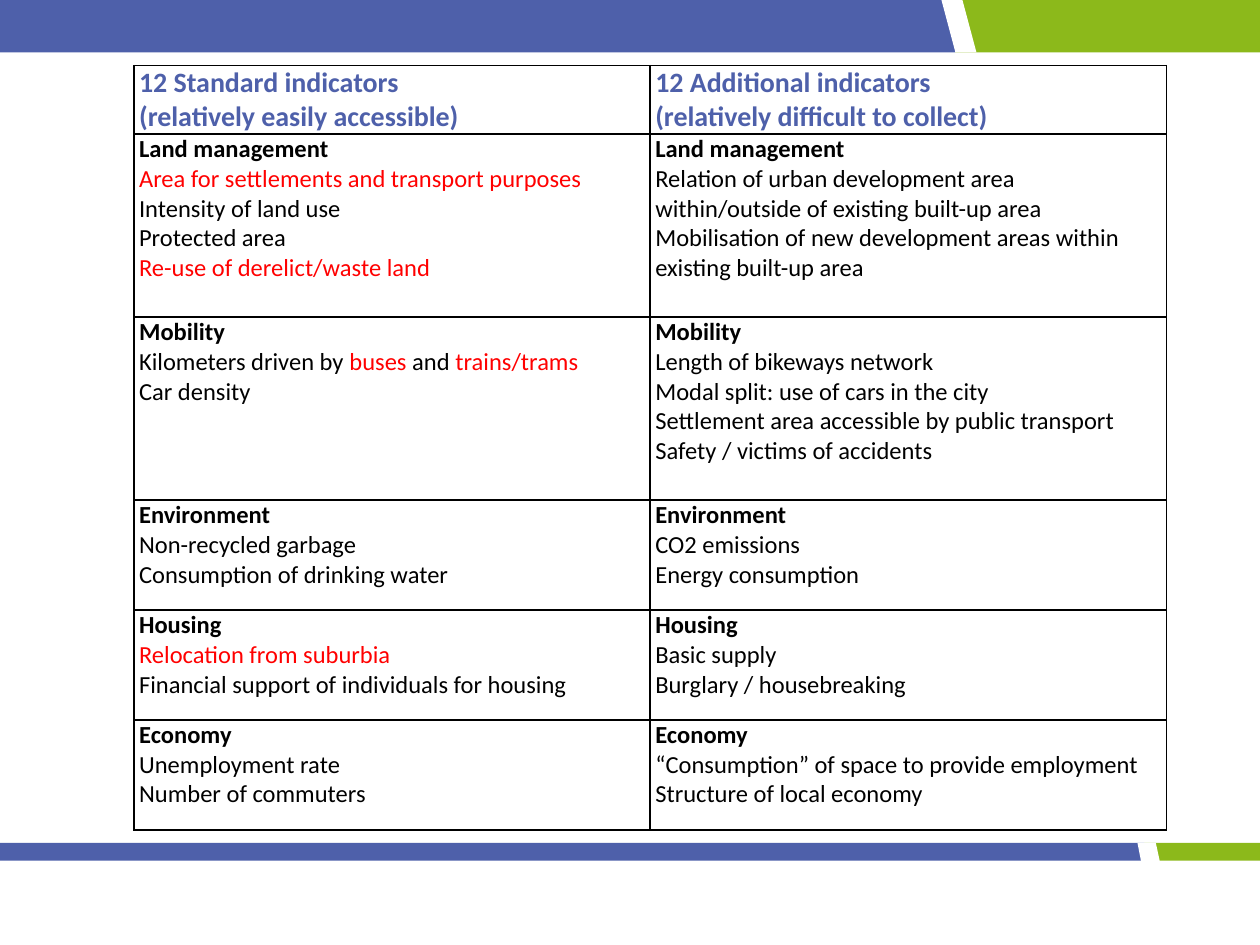
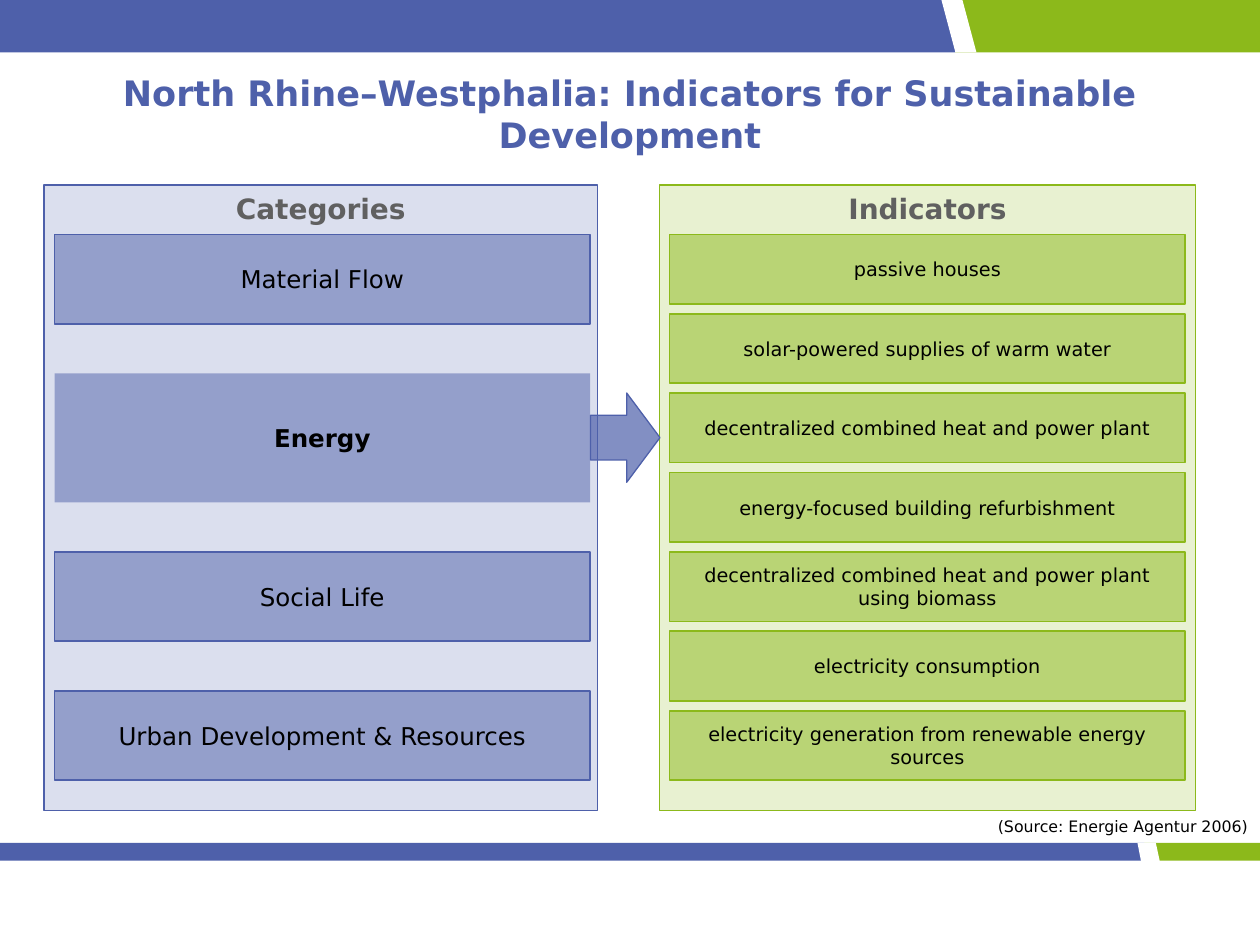
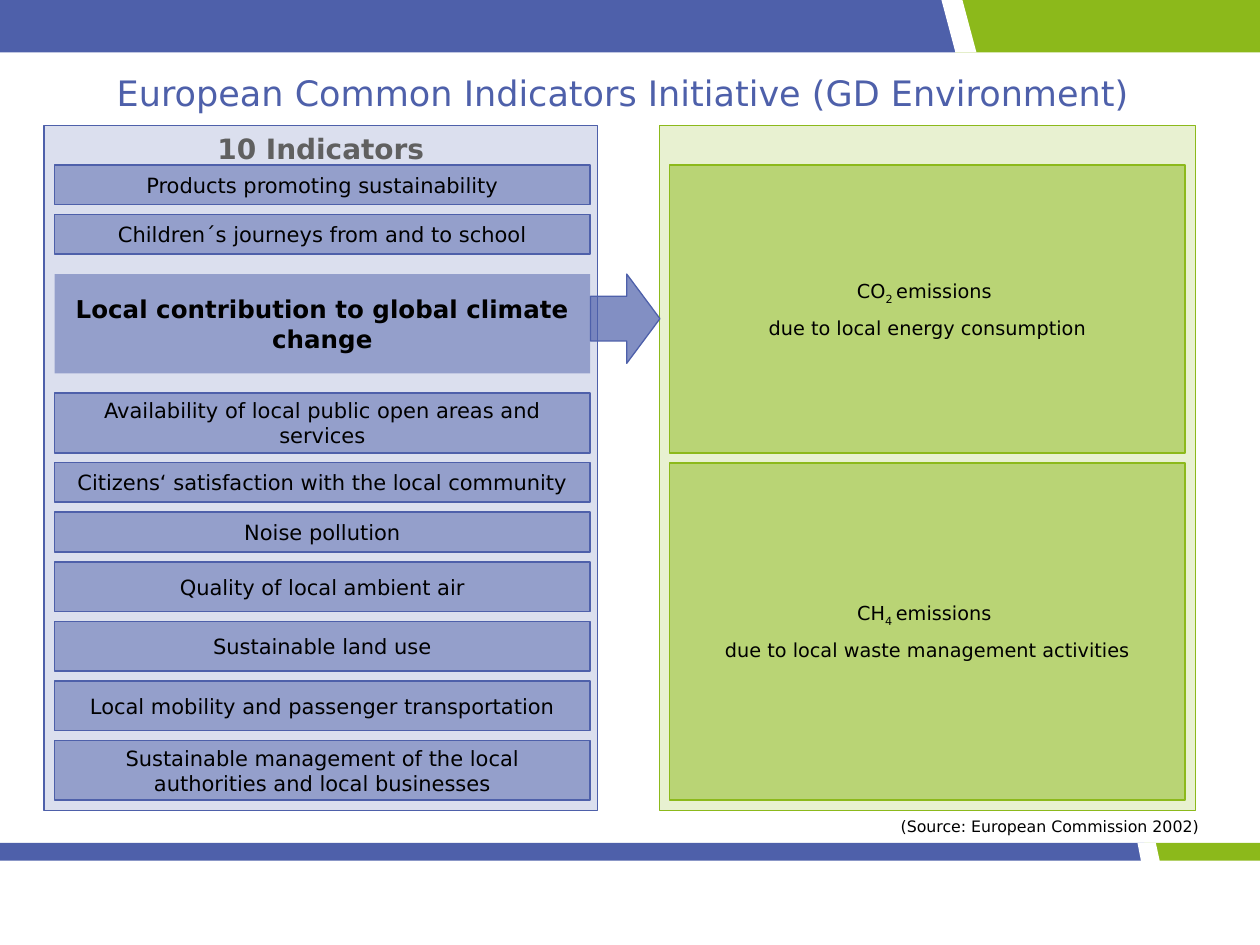
"""Three slides on sustainability indicators: a comparison table and two panel diagrams."""
from pptx import Presentation
from pptx.dml.color import RGBColor
from pptx.enum import shapes, text
from pptx.oxml.xmlchemy import OxmlElement
from pptx.util import Pt

BLUE = RGBColor(0x4E, 0x60, 0xAA)
GREEN = RGBColor(0x8C, 0xB9, 0x1B)
GREY = RGBColor(0x60, 0x60, 0x60)
RED = RGBColor(0xFF, 0, 0)
BLACK = RGBColor(0, 0, 0)
WHITE = RGBColor(0xFF, 0xFF, 0xFF)
SANS, TABLE_FONT = "DejaVu Sans", "Calibri"
LEFT, CENTER, RIGHT = text.PP_ALIGN.LEFT, text.PP_ALIGN.CENTER, text.PP_ALIGN.RIGHT
TOP, MIDDLE = text.MSO_ANCHOR.TOP, text.MSO_ANCHOR.MIDDLE
RECT, ARROW = shapes.MSO_SHAPE.RECTANGLE, shapes.MSO_SHAPE.RIGHT_ARROW

BANDS = [
    (0, 0, 546, 30, BLUE),
    (546, 0, 174, 30, GREEN),
    (0, 481.7, 654, 10.2, BLUE),
    (654, 481.7, 66, 10.2, GREEN),
]
GAPS = [
    [(538, 0), (550, 0), (558, 30), (546, 30)],
    [(650, 481.7), (660.5, 481.7), (662.7, 491.9), (652, 491.9)],
]

TABLE_BOX = (76.5, 37.5, 590, 436.5)
ROW_HEIGHTS = [39, 104.6, 104.6, 62.8, 62.8, 62.8]
INDICATORS = [
    (["12 Standard indicators", "(relatively easily accessible)"],
     ["12 Additional indicators", "(relatively difficult to collect)"]),
    (["Land management", "*Area for settlements and transport purposes*",
      "Intensity of land use", "Protected area", "*Re-use of derelict/waste land*"],
     ["Land management", "Relation of urban development area",
      "within/outside of existing built-up area",
      "Mobilisation of new development areas within", "existing built-up area"]),
    (["Mobility", "Kilometers driven by *buses* and *trains/trams*", "Car density"],
     ["Mobility", "Length of bikeways network", "Modal split: use of cars in the city",
      "Settlement area accessible by public transport", "Safety / victims of accidents"]),
    (["Environment", "Non-recycled garbage", "Consumption of drinking water"],
     ["Environment", "CO2 emissions", "Energy consumption"]),
    (["Housing", "*Relocation from suburbia*", "Financial support of individuals for housing"],
     ["Housing", "Basic supply", "Burglary / housebreaking"]),
    (["Economy", "Unemployment rate", "Number of commuters"],
     ["Economy", "“Consumption” of space to provide employment",
      "Structure of local economy"]),
]

UNIT = 5.67
PANEL_BOTTOM = 463
DIAGRAMS = [
    dict(
        title="North Rhine–Westphalia: Indicators for Sustainable Development",
        title_box=(20, 37.5, 680, 54), title_bold=True,
        panel_top=105.8, box_top=134, arrow_top=224.6,
        heads=("Categories", "Indicators"), left_size=14, left_gap=5, focus_pad=0,
        focus="Energy",
        left=[("Material Flow", 9), ("Energy", 13), ("Social Life", 9),
              ("Urban Development & Resources", 9)],
        right=[(["passive houses"], 7), (["solar-powered supplies of warm water"], 7),
               (["decentralized combined heat and power plant"], 7),
               (["energy-focused building refurbishment"], 7),
               (["decentralized combined heat and power plant using biomass"], 7),
               (["electricity consumption"], 7),
               (["electricity generation from renewable energy sources"], 7)],
        source="(Source: Energie Agentur 2006)", source_box=(558, 463, 162, 18),
    ),
    dict(
        title="European Common Indicators Initiative (GD Environment)",
        title_box=(50, 37.5, 612, 54), title_bold=False,
        panel_top=71.6, box_top=94.3, arrow_top=156.6,
        heads=("10 Indicators", ""), left_size=12, left_gap=1, focus_pad=1,
        focus="Local contribution to global climate change",
        left=[("Products promoting sustainability", 4),
              ("Children´s journeys from and to school", 4),
              ("Local contribution to global climate change", 10),
              ("Availability of local public open areas and services", 6),
              ("Citizens‘ satisfaction with the local community", 4),
              ("Noise pollution", 4), ("Quality of local ambient air", 5),
              ("Sustainable land use", 5),
              ("Local mobility and passenger transportation", 5),
              ("Sustainable management of the local authorities and local businesses", 6)],
        right=[(["CO*2 *emissions ", "due to local energy consumption"], 29),
               (["CH*4 *emissions ", "due to local waste management activities"], 34)],
        source="(Source: European Commission 2002)", source_box=(490.5, 463, 201.5, 18),
    ),
]


def points(values):
    return [Pt(v) for v in values]


def redden(r):
    r.font.color.rgb = RED


def subscript(r):
    r._r.get_or_add_rPr().set("baseline", "-25000")


def write(tf, lines, size, color=BLACK, bold=False, align=CENTER, font=SANS,
          anchor=TOP, after=0, mark=None):
    """Fill a text frame; parts between asterisks are passed to mark."""
    tf.word_wrap = True
    tf.vertical_anchor = anchor
    for i, line in enumerate(lines):
        p = tf.paragraphs[0] if i == 0 else tf.add_paragraph()
        p.alignment = align
        p.space_after = Pt(after)
        for j, part in enumerate(line.split("*")):
            if part:
                r = p.add_run()
                r.text = part
                r.font.name, r.font.size = font, Pt(size)
                r.font.bold, r.font.color.rgb = bold, color
                if j % 2:
                    mark(r)


def paint(sp, color, opacity=100, line=0):
    sp.shadow.inherit = False
    sp.fill.solid()
    sp.fill.fore_color.rgb = color
    if opacity < 100:
        alpha = OxmlElement("a:alpha")
        alpha.set("val", str(opacity * 1000))
        sp.element.xpath("./p:spPr/a:solidFill/a:srgbClr")[0].append(alpha)
    if line:
        sp.line.color.rgb = color
        sp.line.width = Pt(line)
    else:
        sp.line.fill.background()
    return sp


def add_block(slide, box, color, opacity=100, line=0, kind=RECT):
    return paint(slide.shapes.add_shape(kind, *points(box)), color, opacity, line)


def add_bands(slide, master):
    """Draw the bands and move them to the back of the master."""
    bands = [add_block(slide, box, color) for *box, color in BANDS]
    for start, *rest in GAPS:
        builder = slide.shapes.build_freeform(*points(start), scale=1.0)
        builder.add_line_segments([points(pt) for pt in rest], close=True)
        bands.append(paint(builder.convert_to_shape(), WHITE))
    for i, sp in enumerate(bands):
        sp.element.xpath("./p:nvSpPr/p:cNvPr")[0].set("id", str(100 + i))
        master.shapes.element.insert(2 + i, sp.element)


def add_borders(cell):
    tcPr = cell._tc.get_or_add_tcPr()
    for side in "LRTB":
        ln = OxmlElement(f"a:ln{side}")
        ln.set("w", str(Pt(1)))
        fill, color = OxmlElement("a:solidFill"), OxmlElement("a:srgbClr")
        color.set("val", str(BLACK))
        fill.append(color)
        ln.append(fill)
        tcPr.append(ln)


def add_indicator_table(slide):
    table = slide.shapes.add_table(len(INDICATORS), 2, *points(TABLE_BOX)).table
    table.first_row = table.horz_banding = False
    for i, (row, height) in enumerate(zip(INDICATORS, ROW_HEIGHTS)):
        table.rows[i].height = Pt(height)
        for j, lines in enumerate(row):
            cell = table.cell(i, j)
            add_borders(cell)
            cell.fill.background()
            cell.margin_left = cell.margin_right = Pt(3)
            cell.margin_top = cell.margin_bottom = 0
            header = i == 0
            write(cell.text_frame, lines, 16 if header else 14, BLUE if header else BLACK,
                  header, LEFT, TABLE_FONT, mark=redden)
            for r in cell.text_frame.paragraphs[0].runs:
                r.font.bold = True


def add_diagram(slide, d):
    title = slide.shapes.title
    title.left, title.top, title.width, title.height = points(d["title_box"])
    title.text_frame.auto_size = text.MSO_AUTO_SIZE.NONE
    write(title.text_frame, [d["title"]], 20, BLUE, d["title_bold"])

    panel_height = PANEL_BOTTOM - d["panel_top"]
    for x, w, color, head in zip((25.2, 377), (316.3, 306), (BLUE, GREEN), d["heads"]):
        panel = add_block(slide, (x, d["panel_top"], w, panel_height), color, 20, 0.75)
        write(panel.text_frame, [head], 16, GREY, True)

    arrow = add_block(slide, (337.4, d["arrow_top"], 39.7, 51), BLUE, 70, 0.75, ARROW)
    arrow.adjustments[0], arrow.adjustments[1] = 0.5, 0.478

    y = d["box_top"]
    for label, units in d["left"]:
        focus = label == d["focus"]
        pad = d["focus_pad"] * UNIT if focus else 0
        box = add_block(slide, (31.2, y + pad, 306, units * UNIT), BLUE, 50, 0 if focus else 1)
        write(box.text_frame, [label], 14 if focus else d["left_size"], bold=focus,
              anchor=MIDDLE)
        y += (units + d["left_gap"]) * UNIT + 2 * pad

    y = d["box_top"]
    for lines, units in d["right"]:
        box = add_block(slide, (382.6, y, 294.8, units * UNIT), GREEN, 50, 1)
        write(box.text_frame, lines, 11, anchor=MIDDLE, after=6, mark=subscript)
        y += (units + 1) * UNIT

    source = slide.shapes.add_textbox(*points(d["source_box"]))
    write(source.text_frame, [d["source"]], 9, align=RIGHT)


def main():
    prs = Presentation()
    prs.slide_width, prs.slide_height = Pt(720), Pt(540)
    title_only, blank = prs.slide_layouts[5], prs.slide_layouts[6]
    slide = prs.slides.add_slide(blank)
    add_bands(slide, prs.slide_master)
    add_indicator_table(slide)
    for d in DIAGRAMS:
        add_diagram(prs.slides.add_slide(title_only), d)
    prs.save("out.pptx")


if __name__ == "__main__":
    main()
